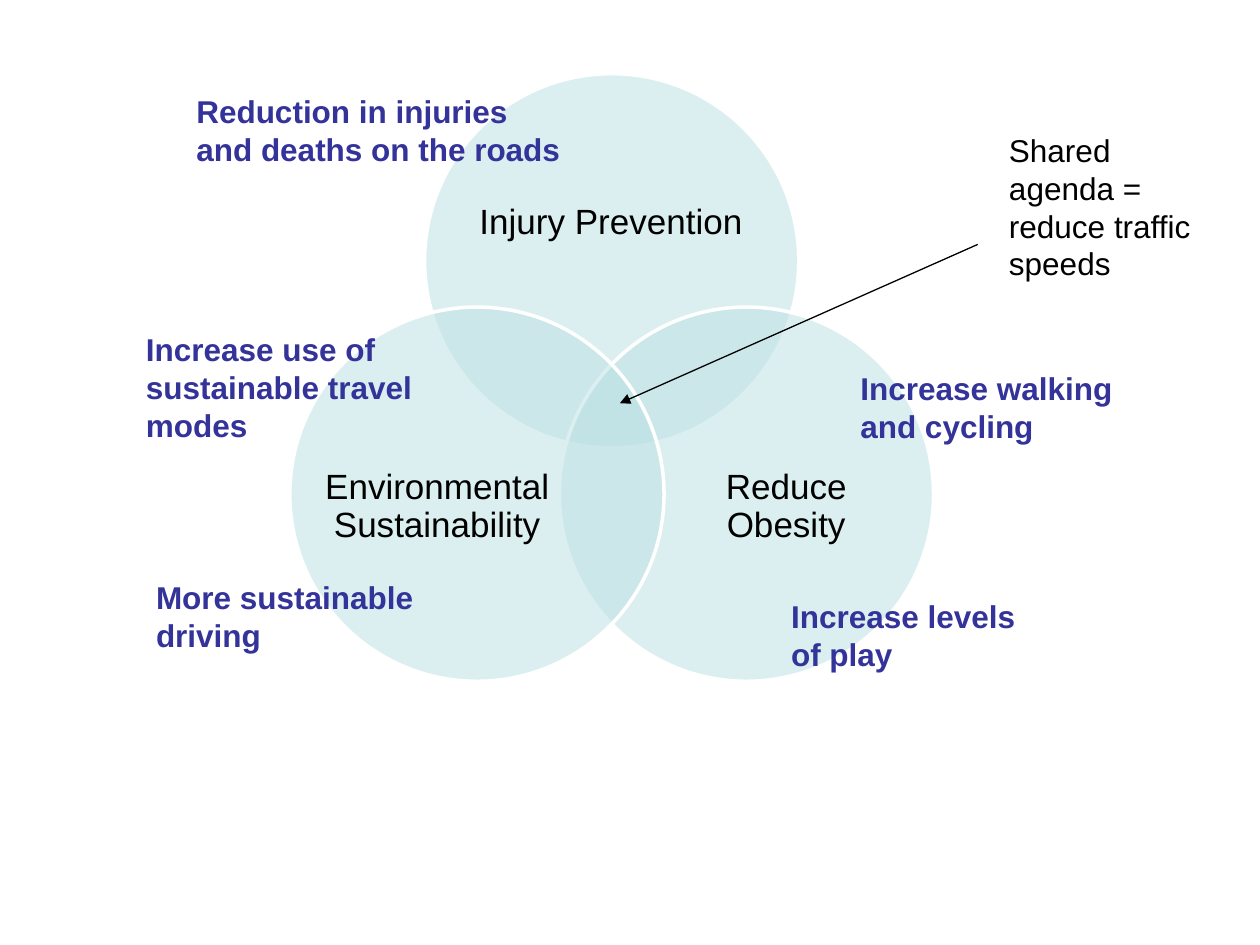
from math import cos, radians, sin

from lxml import etree
from pptx import Presentation
from pptx.dml.color import RGBColor
from pptx.enum.shapes import MSO_CONNECTOR, MSO_SHAPE
from pptx.enum.text import MSO_ANCHOR as Anchor, MSO_AUTO_SIZE as AutoSize, PP_ALIGN as Align
from pptx.oxml.ns import qn
from pptx.util import Inches, Pt

BLACK = RGBColor(0x00, 0x00, 0x00)
WHITE = RGBColor(0xFF, 0xFF, 0xFF)
AQUA = RGBColor(0xBB, 0xE0, 0xE3)
INDIGO = RGBColor(0x33, 0x33, 0x99)

COLUMNS, ROWS = 100, 75
TOPIC = {"size": Pt(20), "color": BLACK}
OUTCOME = {"size": Pt(18), "color": INDIGO, "bold": True}
SHARED = {"size": Pt(18), "color": BLACK}

VENN_CENTRE = (48.55, 33.05)
VENN_REACH = 12.35
CIRCLE_SIZE = 29.7

# Circle angle in degrees, topic, and the topic's left, top, width, height
CIRCLES = [
    (-90, "Injury Prevention", (37.6, 11, 21.8, 13.4)),
    (30, "Reduce Obesity", (53.5, 32.1, 17.8, 16.3)),
    (150, "Environmental Sustainability", (25.8, 32.1, 17.8, 16.3)),
]
NOTES = [
    ("Shared agenda = reduce traffic speeds", (79.1, 9.9, 17.3, 13.1), SHARED),
    ("Increase use of sustainable travel modes", (10.6, 25.7, 24.4, 10.1), OUTCOME),
    ("More sustainable driving", (11.4, 45.4, 23.6, 7.1), OUTCOME),
    ("Increase walking and cycling", (67.3, 28.8, 23.6, 7.1), OUTCOME),
    ("Increase levels of play", (61.8, 46.9, 20.5, 7.1), OUTCOME),
    ("Reduction in injuries and deaths on the roads", (14.6, 6.8, 31.5, 7.1), OUTCOME),
]


class VennSlide:
    """Places elements by columns and rows of the slide's grid."""

    def __init__(self, prs, font="Arial"):
        self.slide = prs.slides.add_slide(prs.slide_layouts[6])
        self.shapes = self.slide.shapes
        self.font = font
        self.column = prs.slide_width / COLUMNS
        self.row = prs.slide_height / ROWS

    def place(self, *lengths):
        """Turn alternating columns and rows into slide lengths."""
        return [round(n * (self.row if i % 2 else self.column)) for i, n in enumerate(lengths)]

    def circle(self, angle):
        left = VENN_CENTRE[0] + VENN_REACH * cos(radians(angle)) - CIRCLE_SIZE / 2
        top = VENN_CENTRE[1] + VENN_REACH * sin(radians(angle)) - CIRCLE_SIZE / 2
        disc = self.shapes.add_shape(
            MSO_SHAPE.OVAL, *self.place(left, top, CIRCLE_SIZE, CIRCLE_SIZE))
        disc.shadow.inherit = False
        disc.fill.solid()
        disc.fill.fore_color.rgb = AQUA
        tint = disc.fill._xPr.find(f"{qn('a:solidFill')}/{qn('a:srgbClr')}")
        etree.SubElement(tint, qn("a:alpha"), val="50000")
        disc.line.color.rgb = WHITE
        disc.line.width = Pt(2)

    def text(self, words, area, style, frame_format):
        frame = self.shapes.add_textbox(*self.place(*area)).text_frame
        for name, value in {"word_wrap": True, **frame_format}.items():
            setattr(frame, name, value)
        paragraph = frame.paragraphs[0]
        run = paragraph.add_run()
        run.text = words
        run.font.name = self.font
        for name, value in style.items():
            if name == "color":
                run.font.color.rgb = value
            else:
                setattr(run.font, name, value)
        return paragraph

    def topic(self, words, area):
        sides = ("left", "top", "right", "bottom")
        frame_format = {f"margin_{side}": 0 for side in sides}
        frame_format["vertical_anchor"] = Anchor.MIDDLE
        paragraph = self.text(words, area, TOPIC, frame_format)
        paragraph.alignment = Align.CENTER
        paragraph.line_spacing = 0.9

    def note(self, words, area, style):
        self.text(words, area, style, {"auto_size": AutoSize.SHAPE_TO_FIT_TEXT})

    def arrow(self, tip, tail):
        """Draw a line with its arrowhead at the tip."""
        pointer = self.shapes.add_connector(
            MSO_CONNECTOR.STRAIGHT, *self.place(*tip, *tail))
        pointer.line.color.rgb = BLACK
        pointer.line.width = Pt(0.75)
        etree.SubElement(pointer.line._get_or_add_ln(), qn("a:headEnd"), type="triangle")
        etree.SubElement(pointer._element.spPr, qn("a:effectLst"))


def main():
    prs = Presentation()
    prs.slide_width, prs.slide_height = Inches(10), Inches(7.5)
    venn = VennSlide(prs)
    for angle, words, area in CIRCLES:
        venn.circle(angle)
        venn.topic(words, area)
    venn.arrow(tip=(49.2, 32), tail=(77.6, 19.4))
    for words, area, style in NOTES:
        venn.note(words, area, style)
    prs.save("out.pptx")


if __name__ == "__main__":
    main()
